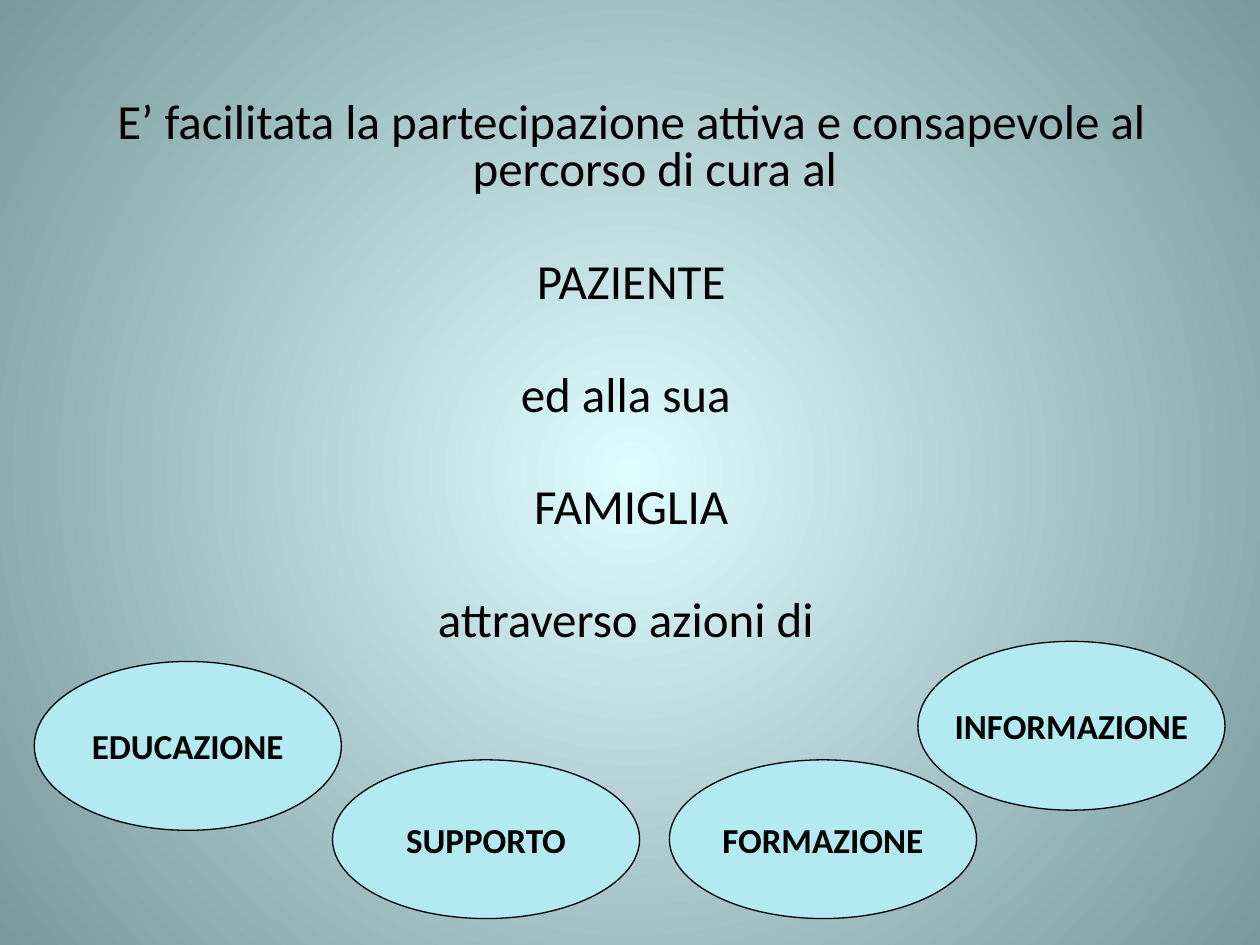
from lxml import etree
from pptx import Presentation
from pptx.dml.color import RGBColor
from pptx.enum.shapes import MSO_SHAPE
from pptx.enum.text import MSO_ANCHOR, MSO_AUTO_SIZE, PP_ALIGN
from pptx.oxml.ns import qn
from pptx.util import Pt

CENTER = PP_ALIGN.CENTER
TOP, MIDDLE = MSO_ANCHOR.TOP, MSO_ANCHOR.MIDDLE
NO_AUTOFIT = MSO_AUTO_SIZE.NONE
OVAL = MSO_SHAPE.OVAL

BLACK = RGBColor(0x00, 0x00, 0x00)
GLOW = RGBColor(0xDE, 0xFB, 0xFF)
TEAL = RGBColor(0x79, 0x98, 0x9C)
AQUA = RGBColor(0xB3, 0xEA, 0xF2)
FONT = "Calibri"
HANGING = 27

STATEMENT = [
    "E’ facilitata la partecipazione attiva e consapevole al percorso di cura al",
    "PAZIENTE",
    "ed alla sua ",
    "FAMIGLIA",
    "attraverso azioni di ",
]
ACTIONS = [
    ("EDUCAZIONE", (19.6, 378, 175.5, 96.5)),
    ("SUPPORTO", (190, 434.2, 175.5, 90.7)),
    ("FORMAZIONE", (382.5, 434.2, 175.5, 90.7)),
    ("INFORMAZIONE", (524.5, 366.5, 175.5, 96.5)),
]


def paint_background(slide):
    """Fill the slide with a circular gradient, light at the centre."""
    fill = slide.background.fill
    fill.gradient()
    for stop, color in zip(fill.gradient_stops, (GLOW, TEAL)):
        stop.color.rgb = color
    linear = next(slide.background._cSld.iter(qn("a:lin")))
    circle = etree.Element(qn("a:path"), path="circle")
    sides = dict.fromkeys("ltrb", "50000")
    etree.SubElement(circle, qn("a:fillToRect"), sides)
    linear.getparent().replace(linear, circle)


def format_text(paragraph, size, bold=False):
    """Centre a paragraph and set its font."""
    paragraph.alignment = CENTER
    font = paragraph.font
    font.name, font.size, font.bold = FONT, Pt(size), bold
    font.color.rgb = BLACK


def place_statement(body, box):
    """Write the centred, widely spaced statement in the body placeholder."""
    body.left, body.top, body.width, body.height = map(Pt, box)
    frame = body.text_frame
    frame.auto_size = NO_AUTOFIT
    frame.vertical_anchor = TOP
    frame.text = "\n".join(STATEMENT)
    for index, paragraph in enumerate(frame.paragraphs):
        format_text(paragraph, 28)
        paragraph.line_spacing = 0.8
        paragraph.space_before = Pt(37.5 if index else 5.6)
        properties = paragraph._p.get_or_add_pPr()
        properties.set("marL", str(Pt(HANGING)))
        properties.set("indent", str(Pt(-HANGING)))
        bullet = etree.Element(qn("a:buNone"))
        properties.find(qn("a:defRPr")).addprevious(bullet)


def place_action(slide, label, box):
    """Draw one labelled oval."""
    oval = slide.shapes.add_shape(OVAL, *map(Pt, box))
    oval.shadow.inherit = False
    oval.fill.solid()
    oval.fill.fore_color.rgb = AQUA
    oval.line.color.rgb = BLACK
    oval.line.width = Pt(0.75)
    frame = oval.text_frame
    frame.word_wrap = False
    frame.vertical_anchor = MIDDLE
    frame.text = label
    format_text(frame.paragraphs[0], 20, bold=True)


def main():
    """Build and save the slide."""
    deck = Presentation()
    deck.slide_width, deck.slide_height = Pt(720), Pt(540)
    slide = deck.slides.add_slide(deck.slide_layouts[1])
    title = slide.shapes.title._element
    title.getparent().remove(title)
    paint_background(slide)
    place_statement(slide.placeholders[1], (36.7, 54.7, 648, 439.2))
    for label, box in ACTIONS:
        place_action(slide, label, box)
    deck.save("out.pptx")


if __name__ == "__main__":
    main()
